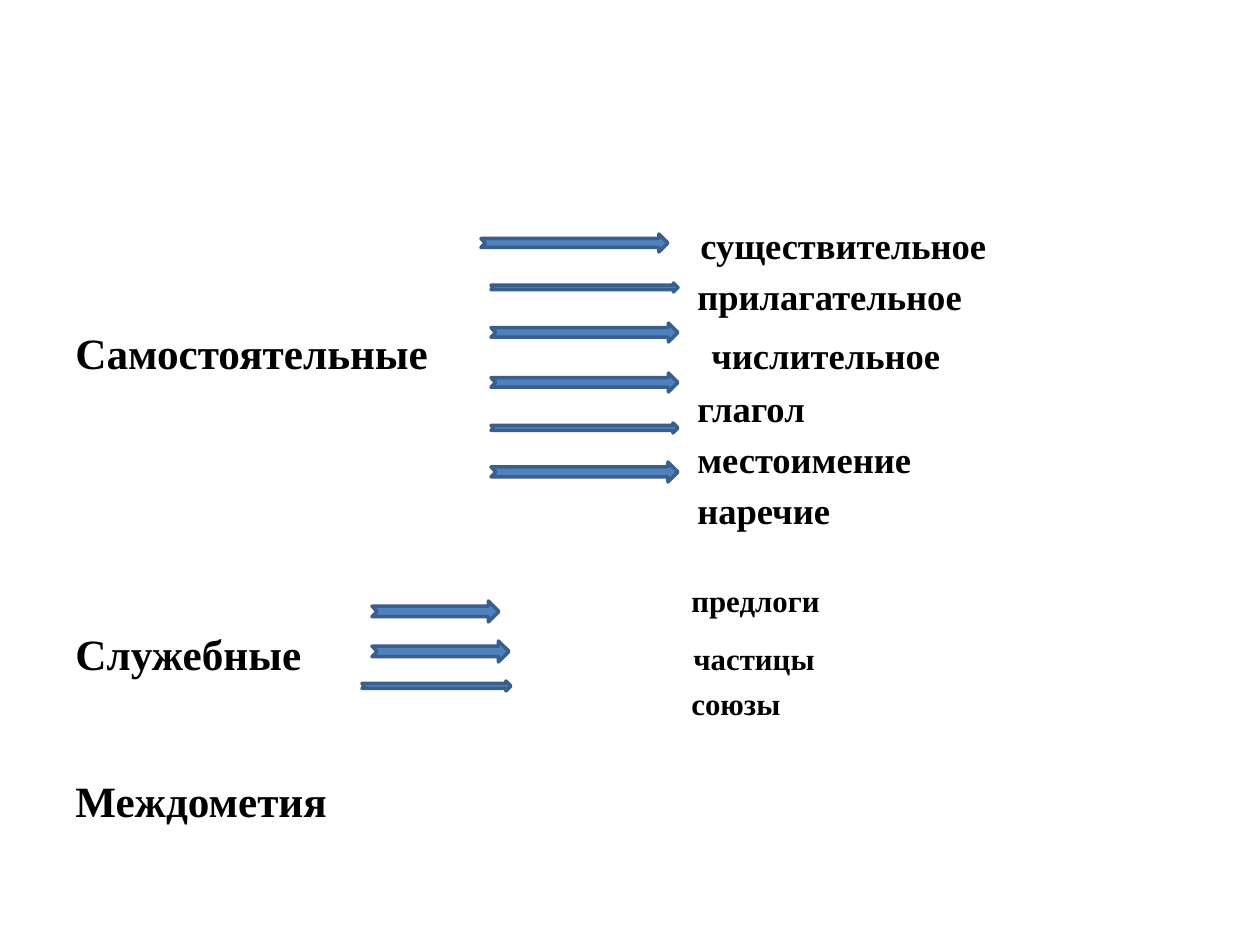
from lxml import etree
from pptx import Presentation
from pptx.dml.color import RGBColor
from pptx.enum.shapes import MSO_SHAPE
from pptx.oxml.ns import qn
from pptx.util import Emu, Pt

ARROW = MSO_SHAPE.NOTCHED_RIGHT_ARROW
PX = 914400 // 126
FONT = "Times New Roman"
HEADING_SIZE, MAJOR_SIZE, MINOR_SIZE = 24.7, 20.9, 17.6

LINES = [
    {"word": "существительное", "size": MAJOR_SIZE, "tab": 625},
    {"word": "прилагательное", "size": MAJOR_SIZE, "tab": 622, "gap": 4},
    {"heading": "Самостоятельные", "word": "числительное", "size": MAJOR_SIZE, "tab": 636, "gap": 4.8},
    {"word": "глагол", "size": MAJOR_SIZE, "tab": 622, "gap": 4.2},
    {"word": "местоимение", "size": MAJOR_SIZE, "tab": 622, "gap": 4.2},
    {"word": "наречие", "size": MAJOR_SIZE, "tab": 622, "gap": 4},
    {"word": "предлоги", "size": MINOR_SIZE, "tab": 616, "gap": 28.8},
    {"heading": "Служебные", "word": "частицы", "size": MINOR_SIZE, "tab": 618, "gap": 4.7},
    {"word": "союзы", "size": MINOR_SIZE, "tab": 616, "gap": 3.4},
    {"heading": "Междометия", "gap": 30},
]

ARROWS = [
    (481, 234, 187, 18),
    (491, 283, 187, 9),
    (491, 323, 187, 19),
    (491, 373, 187, 19),
    (491, 423, 187, 10),
    (491, 462, 187, 20),
    (372, 601, 127, 21),
    (372, 641, 137, 21),
    (362, 681, 149, 10),
]


def px(value):
    return Emu(value * PX)


def color(value):
    return RGBColor.from_string(value)


def add_text(paragraph, text, size):
    run = paragraph.add_run()
    run.text = text
    run.font.name = FONT
    run.font.size = Pt(size)
    run.font.bold = True
    run.font.color.rgb = color("000000")


def add_tab_stop(paragraph, position):
    properties = paragraph._p.get_or_add_pPr()
    tabs = etree.SubElement(properties, qn("a:tabLst"))
    etree.SubElement(tabs, qn("a:tab"), pos=str(px(position)), algn="l")


def add_word_list(slide):
    frame = slide.shapes.add_textbox(px(63), px(217), px(1134), px(627)).text_frame
    frame.word_wrap = True
    for index, line in enumerate(LINES):
        paragraph = frame.add_paragraph() if index else frame.paragraphs[0]
        if "tab" in line:
            add_tab_stop(paragraph, line["tab"])
        if "gap" in line:
            paragraph.space_before = Pt(line["gap"])
        if "heading" in line:
            add_text(paragraph, line["heading"], HEADING_SIZE)
        if "word" in line:
            add_text(paragraph, "\t" + line["word"], line["size"])


def add_arrow(slide, bounds):
    arrow = slide.shapes.add_shape(ARROW, *map(px, bounds))
    arrow.shadow.inherit = False
    arrow.fill.solid()
    arrow.fill.fore_color.rgb = color("4F81BD")
    arrow.line.color.rgb = color("3A5F8C")
    arrow.line.width = Pt(2)


def main():
    presentation = Presentation()
    presentation.slide_width = px(1260)
    presentation.slide_height = px(945)
    slide = presentation.slides.add_slide(presentation.slide_layouts[6])
    add_word_list(slide)
    for bounds in ARROWS:
        add_arrow(slide, bounds)
    presentation.save("out.pptx")


if __name__ == "__main__":
    main()
